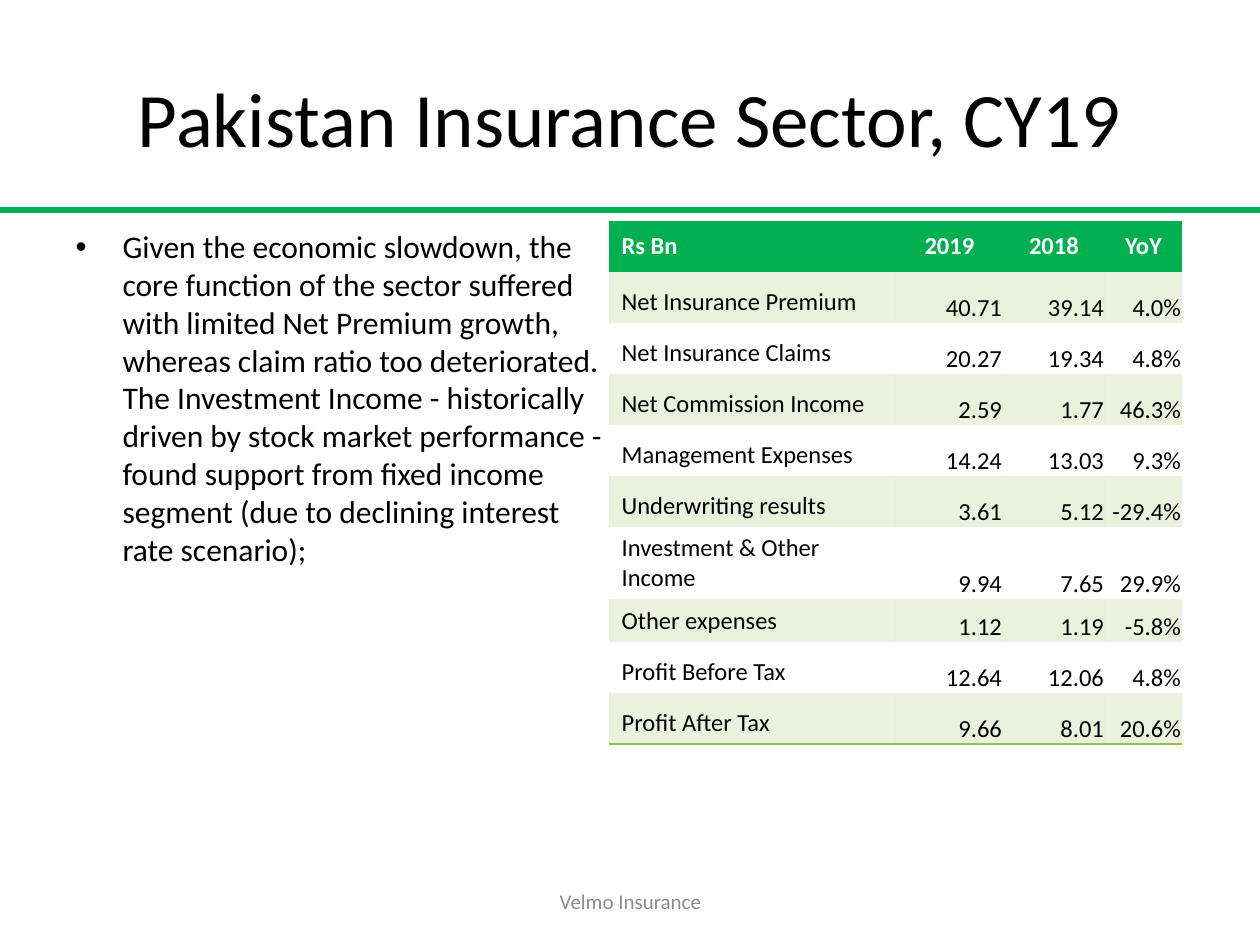
from lxml.etree import SubElement
from pptx import Presentation
from pptx.dml.color import RGBColor
from pptx.enum.shapes import MSO_CONNECTOR as Conn
from pptx.enum.text import MSO_ANCHOR as Anchor, MSO_AUTO_SIZE as Fit, PP_ALIGN as Align
from pptx.oxml import parse_xml
from pptx.oxml.ns import nsdecls, qn
from pptx.util import Pt

PX = 914400 / 126
GREEN, OLIVE, BLACK, WHITE, GREY = "00B050", "9BBB59", "000000", "FFFFFF", "8C8C8C"
PLAIN = "{2D5ABB26-0587-4C30-8999-92F81FD0307C}"

TITLE = "Pakistan Insurance Sector, CY19"
BODY = (
    "Given the economic slowdown, the core function of the sector suffered with "
    "limited Net Premium growth, whereas claim ratio too deteriorated. The "
    "Investment Income - historically driven by stock market performance - found "
    "support from fixed income segment (due to declining interest rate scenario);"
)
FOOT = "Velmo Insurance"
ROWS = [
    ("Rs Bn", "2019", "2018", "YoY"),
    ("Net Insurance Premium", "40.71", "39.14", "4.0%"),
    ("Net Insurance Claims", "20.27", "19.34", "4.8%"),
    ("Net Commission Income", "2.59", "1.77", "46.3%"),
    ("Management Expenses", "14.24", "13.03", "9.3%"),
    ("Underwriting results", "3.61", "5.12", "-29.4%"),
    ("Investment & Other Income", "9.94", "7.65", "29.9%"),
    ("Other expenses", "1.12", "1.19", "-5.8%"),
    ("Profit Before Tax", "12.64", "12.06", "4.8%"),
    ("Profit After Tax", "9.66", "8.01", "20.6%"),
]
WIDTHS = [287, 107, 102, 77]
HEIGHTS = [51] * 6 + [72, 43] + [51] * 2


def px(n):
    return round(n * PX)


def rgb(code):
    return RGBColor.from_string(code)


def place(shape, box):
    for name, n in zip(("left", "top", "width", "height"), box):
        setattr(shape, name, px(n))


def write(frame, text, size, color, align=Align.LEFT, bold=False):
    frame.text = text
    para = frame.paragraphs[0]
    para.alignment = align
    para.space_before = Pt(0)
    style = {"name": "Calibri", "size": Pt(size), "bold": bold}
    for name, value in style.items():
        setattr(para.font, name, value)
    para.font.color.rgb = rgb(color)
    return para


def add_rule(slide, left, top, width):
    line = slide.shapes.add_connector(
        Conn.STRAIGHT, px(left), px(top), px(left + width), px(top))
    line.line.color.rgb = rgb(GREEN)
    line.line.width = Pt(3)
    SubElement(line._element.spPr, qn("a:effectLst"))


def add_title(slide, box):
    title = slide.shapes.title
    place(title, box)
    title.text_frame.vertical_anchor = Anchor.MIDDLE
    write(title.text_frame, TITLE, 44, BLACK, Align.CENTER)


def add_body(slide, box):
    body = slide.placeholders[1]
    place(body, box)
    frame = body.text_frame
    frame.auto_size = Fit.NONE
    para = write(frame, BODY, 18, BLACK)
    # Hanging bullet from the template
    props = para._p.get_or_add_pPr()
    props.set("marL", str(px(47)))
    props.set("indent", str(px(-47)))


def add_foot(slide, box):
    foot = slide.shapes.add_textbox(*map(px, box))
    frame = foot.text_frame
    frame.word_wrap = True
    frame.vertical_anchor = Anchor.MIDDLE
    write(frame, FOOT, 12, GREY, Align.CENTER)


def fill_cell(cell, color, alpha=100):
    cell.fill.solid()
    cell.fill.fore_color.rgb = rgb(color)
    if alpha < 100:
        tint = cell._tc.tcPr.find(qn("a:solidFill"))[0]
        SubElement(tint, qn("a:alpha"), val=str(alpha * 1000))


def rule_cell(cell):
    cell._tc.get_or_add_tcPr().insert(0, parse_xml(
        f'<a:lnB {nsdecls("a")} w="12700"><a:solidFill>'
        f'<a:srgbClr val="{OLIVE}"/></a:solidFill></a:lnB>'))


def set_cell(cell, text, row, col):
    head = row == 0
    cell.vertical_anchor = Anchor.MIDDLE if head else Anchor.BOTTOM
    align = Align.LEFT if col == 0 else Align.CENTER if head else Align.RIGHT
    write(cell.text_frame, text, 14, WHITE if head else BLACK, align, head)
    # Figures sit close to the cell edge
    if col and not head:
        for side, gap in {"left": 1, "top": 1, "right": 1, "bottom": 0}.items():
            setattr(cell, f"margin_{side}", px(gap))
    if head:
        fill_cell(cell, GREEN)
    elif row % 2:
        fill_cell(cell, OLIVE, 20)
    else:
        cell.fill.background()
    if row == len(ROWS) - 1:
        rule_cell(cell)


def add_grid(slide, left, top):
    box = (left, top, sum(WIDTHS), sum(HEIGHTS))
    grid = slide.shapes.add_table(len(ROWS), len(WIDTHS), *map(px, box)).table
    grid.first_row = grid.horz_banding = False
    grid._tbl.tblPr.find(qn("a:tableStyleId")).text = PLAIN
    for col, width in zip(grid.columns, WIDTHS):
        col.width = px(width)
    for row, height in zip(grid.rows, HEIGHTS):
        row.height = px(height)
    for r, row in enumerate(ROWS):
        for c, text in enumerate(row):
            set_cell(grid.cell(r, c), text, r, c)


def main():
    deck = Presentation()
    deck.slide_width, deck.slide_height = px(1260), px(945)
    slide = deck.slides.add_slide(deck.slide_layouts[1])
    add_rule(slide, 0, 210, 1260)
    add_title(slide, (63, 38, 1134, 158))
    add_body(slide, (63, 221, 557, 624))
    add_grid(slide, 609, 221)
    add_foot(slide, (431, 876, 399, 50))
    deck.save("out.pptx")


if __name__ == "__main__":
    main()
